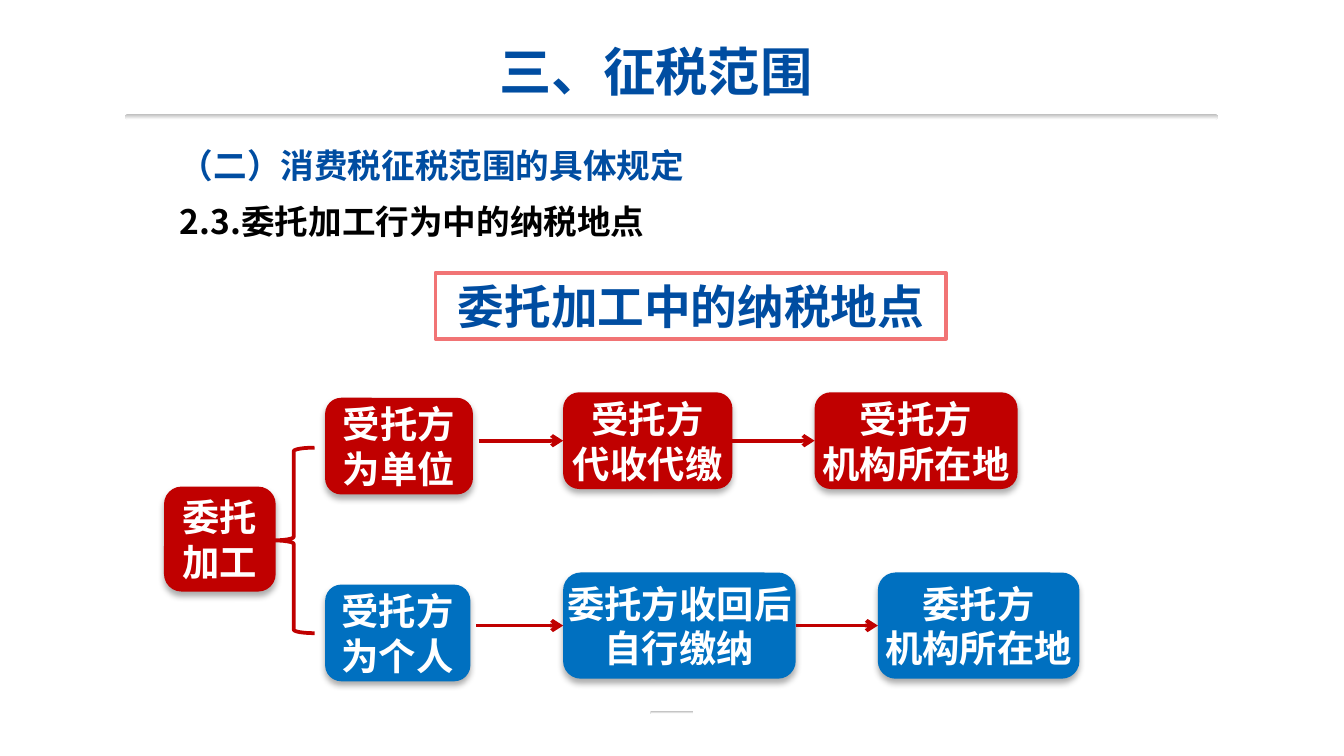
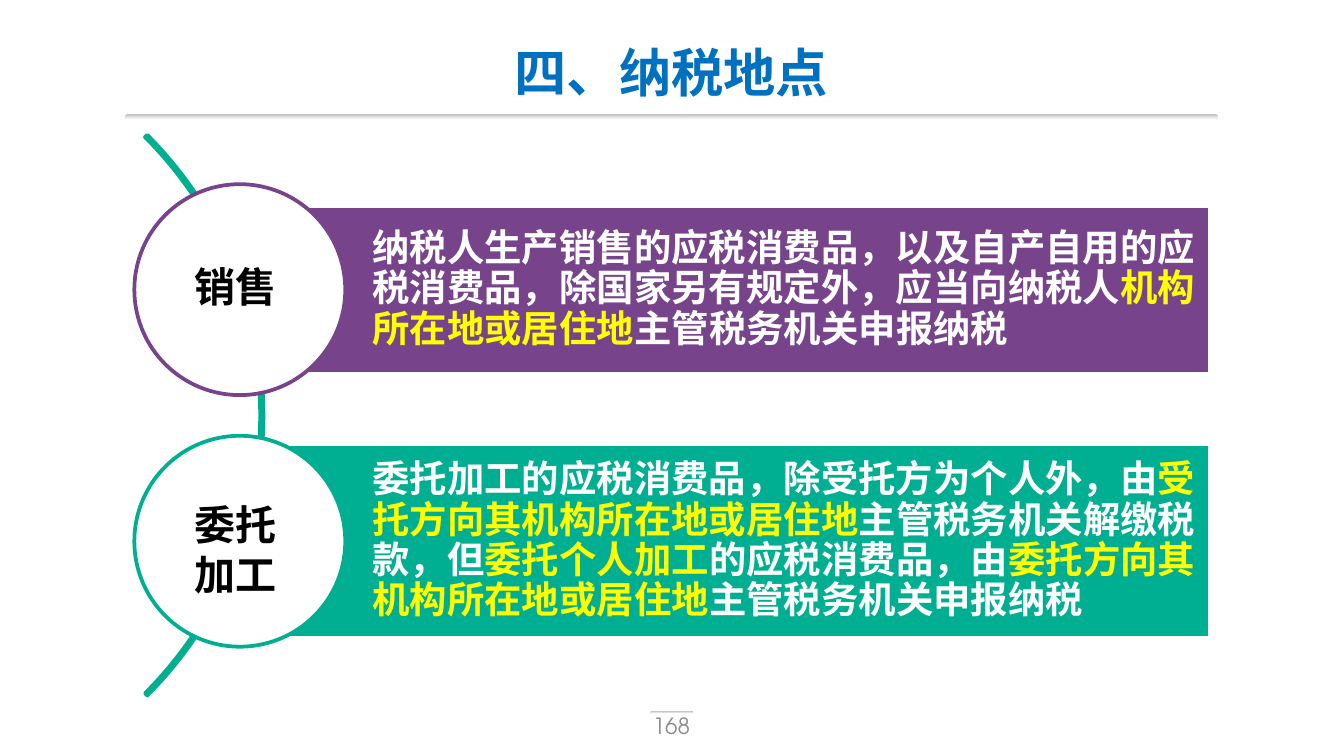
from lxml import etree
from pptx import Presentation, util as u
from pptx.dml.color import RGBColor
from pptx.enum import shapes as es, text as et
from pptx.oxml import parse_xml
from pptx.oxml.ns import nsdecls, qn

Pt = u.Pt
KIND = es.MSO_SHAPE
ALIGN = et.PP_ALIGN
ANCHOR = et.MSO_ANCHOR
CJK = "Noto Sans CJK SC"
GEO = "TeX Gyre Adventor"

HUE = {
    "navy": "004DA1", "blue": "0070C0", "red": "C00000", "pink": "F17475",
    "plum": "77448C", "teal": "00AF92", "gold": "FFFF00",
    "white": "FFFFFF", "black": "000000", "rule": "BFBFBF", "gray": "8C8C8C",
}


def rgb(name):
    return RGBColor.from_string(HUE[name])


# Text
def write(frame, lines, size, hue, face=CJK, bold=True, align=ALIGN.LEFT,
          anchor=ANCHOR.TOP, pad=(7.2, 3.6, 7.2, 3.6), wrap=True,
          space=None, indent=0):
    """Each line is a list of (words, hue) runs, or a plain string."""
    frame.word_wrap = wrap
    frame.vertical_anchor = anchor
    sides = ("margin_left", "margin_top", "margin_right", "margin_bottom")
    for side, gap in zip(sides, pad):
        setattr(frame, side, Pt(gap))
    for i, line in enumerate(lines):
        para = frame.add_paragraph() if i else frame.paragraphs[0]
        para.alignment = align
        if space:
            para.line_spacing = space
        if indent:
            props = para._p.get_or_add_pPr()
            props.set("marL", "0")
            props.set("indent", str(Pt(indent)))
        runs = [(line, hue)] if isinstance(line, str) else line
        for words, tone in runs:
            run = para.add_run()
            run.text = words
            font = run.font
            font.name, font.size, font.bold = face, Pt(size), bold
            font.color.rgb = rgb(tone)
            east = etree.SubElement(run._r.get_or_add_rPr(), qn("a:ea"))
            east.set("typeface", CJK)


def label(slide, box, lines, size, hue, **style):
    area = slide.shapes.add_textbox(*map(Pt, box))
    write(area.text_frame, lines, size, hue, **style)


# Shapes
def shape(slide, kind, box, fill=None, line=None, adj=()):
    item = slide.shapes.add_shape(kind, *map(Pt, box))
    item.shadow.inherit = False
    for i, value in enumerate(adj):
        item.adjustments[i] = value
    if fill:
        item.fill.solid()
        item.fill.fore_color.rgb = rgb(fill)
    else:
        item.fill.background()
    if line:
        item.line.color.rgb = rgb(line)
        item.line.width = Pt(2)
    else:
        item.line.fill.background()
    return item


def card(slide, box, fill, lines):
    item = shape(slide, KIND.ROUNDED_RECTANGLE, box, fill)
    glow = item._element.spPr.find(qn("a:effectLst"))
    glow.append(parse_xml(
        f'<a:outerShdw {nsdecls("a")} blurRad="{Pt(3.5)}" dist="{Pt(2.2)}" '
        f'dir="5400000" rotWithShape="0"><a:srgbClr val="{HUE["black"]}">'
        '<a:alpha val="32000"/></a:srgbClr></a:outerShdw>'))
    write(item.text_frame, lines, 20, "white", align=ALIGN.CENTER,
          anchor=ANCHOR.MIDDLE, wrap=False)
    return item


def arrow(slide, start, end, source, target):
    link = slide.shapes.add_connector(
        es.MSO_CONNECTOR.STRAIGHT, *map(Pt, start + end))
    if source:
        link.begin_connect(source, 3)
    link.end_connect(target, 1)
    link.line.color.rgb = rgb("red")
    link.line.width = Pt(2)
    etree.SubElement(link.line._get_or_add_ln(), qn("a:tailEnd")).set("type", "arrow")
    etree.SubElement(link._element.spPr, qn("a:effectLst"))


# Shared page parts
def page(deck, title, box, hue, face):
    slide = deck.slides.add_slide(deck.slide_layouts[6])
    for band in ((67, 61.2, 585.4, 2.9), (348.5, 381, 23, 1.4)):
        bar = shape(slide, KIND.ROUNDED_RECTANGLE, band, adj=(0.5,))
        bar.fill.gradient()
        bar.fill.gradient_angle = 270
        for stop, tone in zip(bar.fill.gradient_stops, ("rule", "white")):
            stop.color.rgb = rgb(tone)
    label(slide, box, [title], 28, hue, face=face, align=ALIGN.CENTER,
          pad=(5, 3, 5, 3))
    return slide


# One lane of the flow: a head card, then linked steps
def lane(slide, x, y, fill, high, head, steps):
    drop, wide, words = head
    card(slide, (x, y + drop, wide, 51.8), fill, words)
    mid = y + high / 2
    end, last = x + wide + 3.2, None
    left = x + 127.5
    for wide, words in steps:
        item = card(slide, (left, y, wide, high), fill, words)
        arrow(slide, (end, mid), (left, mid), last, item)
        end, last = left + wide, item
        left = end + 44


def flow(slide, x, y):
    card(slide, (x, y + 50.5, 59.8, 56.2), "red", ["委托", "加工"])
    shape(slide, KIND.LEFT_BRACE, (x + 58.3, y + 29.6, 22.3, 99.4),
          line="red", adj=(0.084, 0.5))
    lane(slide, x + 86.3, y, "red", 51.8,
         (2.9, 79.2, ["受托方", "为单位"]),
         [(90.7, ["受托方", "代收代缴"]), (108.7, ["受托方", "机构所在地"])])
    lane(slide, x + 86.3, y + 96.5, "blue", 56.9,
         (6.5, 77.8, ["受托方", "为个人"]),
         [(124.6, ["委托方收回后", "自行缴纳"]), (108, ["委托方", "机构所在地"])])


def scope(deck):
    slide = page(deck, "三、征税范围", (64.8, 18, 573.1, 39.6), "navy", CJK)
    label(slide, (46.8, 65.5, 646.6, 323.3),
          ["（二）消费税征税范围的具体规定",
           [("2.3.委托加工行为中的纳税地点", "black")]],
          18, "navy", space=1.4, indent=42.5)
    sign = shape(slide, KIND.RECTANGLE, (233.3, 146.2, 273.6, 35.3),
                 "white", "pink")
    write(sign.text_frame, ["委托加工中的纳税地点"], 25, "navy",
          align=ALIGN.CENTER, anchor=ANCHOR.MIDDLE)
    flow(slide, 87.9, 210.2)


# One rule: a bar of text with a round tag over its left end
def rule(slide, x, mid, high, hue, runs, tag, tag_box):
    disc = 113
    bar = shape(slide, KIND.RECTANGLE, (x + 56.2, mid - high / 2, 519.8, high),
                hue, "white")
    write(bar.text_frame, [runs], 20, "white", face="Arial",
          anchor=ANCHOR.MIDDLE, pad=(71.3, 4.3, 4.3, 4.3), space=0.9)
    shape(slide, KIND.OVAL, (x, mid - disc / 2, disc, disc), "white", hue)
    top, tall = tag_box
    label(slide, (x + 25.2, mid + top, 59, tall), tag, 22, "black",
          face="Arial", wrap=False)


def place(deck):
    slide = page(deck, "四、纳税地点", (67.7, 18.7, 583.9, 39.6), "blue", "Arial")
    label(slide, (275.8, 378, 167.8, 21.6), ["168"], 12, "gray", face=GEO,
          bold=False, align=ALIGN.CENTER, anchor=ANCHOR.MIDDLE, pad=(5, 3, 5, 3))
    shape(slide, KIND.BLOCK_ARC, (-283.7, 10.1, 424.8, 424.8), line="teal",
          adj=(189, 27, 0.004))
    rule(slide, 72, 155.2, 90, "plum", [
        ("纳税人生产销售的应税消费品，以及自产自用的应税消费品，"
         "除国家另有规定外，应当向纳税人", "white"),
        ("机构所在地或居住地", "gold"),
        ("主管税务机关申报纳税", "white"),
    ], ["销售"], (-18.4, 33.8))
    rule(slide, 72, 290, 103.7, "teal", [
        ("委托加工的应税消费品，除受托方为个人外，由", "white"),
        ("受托方向其机构所在地或居住地", "gold"),
        ("主管税务机关解缴税款，但", "white"),
        ("委托个人加工", "gold"),
        ("的应税消费品，由", "white"),
        ("委托方向其机构所在地或居住地", "gold"),
        ("主管税务机关申报纳税", "white"),
    ], ["委托", "加工"], (-25.8, 60.5))


def main():
    deck = Presentation()
    deck.slide_width, deck.slide_height = Pt(720), Pt(405)
    scope(deck)
    place(deck)
    deck.save("out.pptx")


if __name__ == "__main__":
    main()
